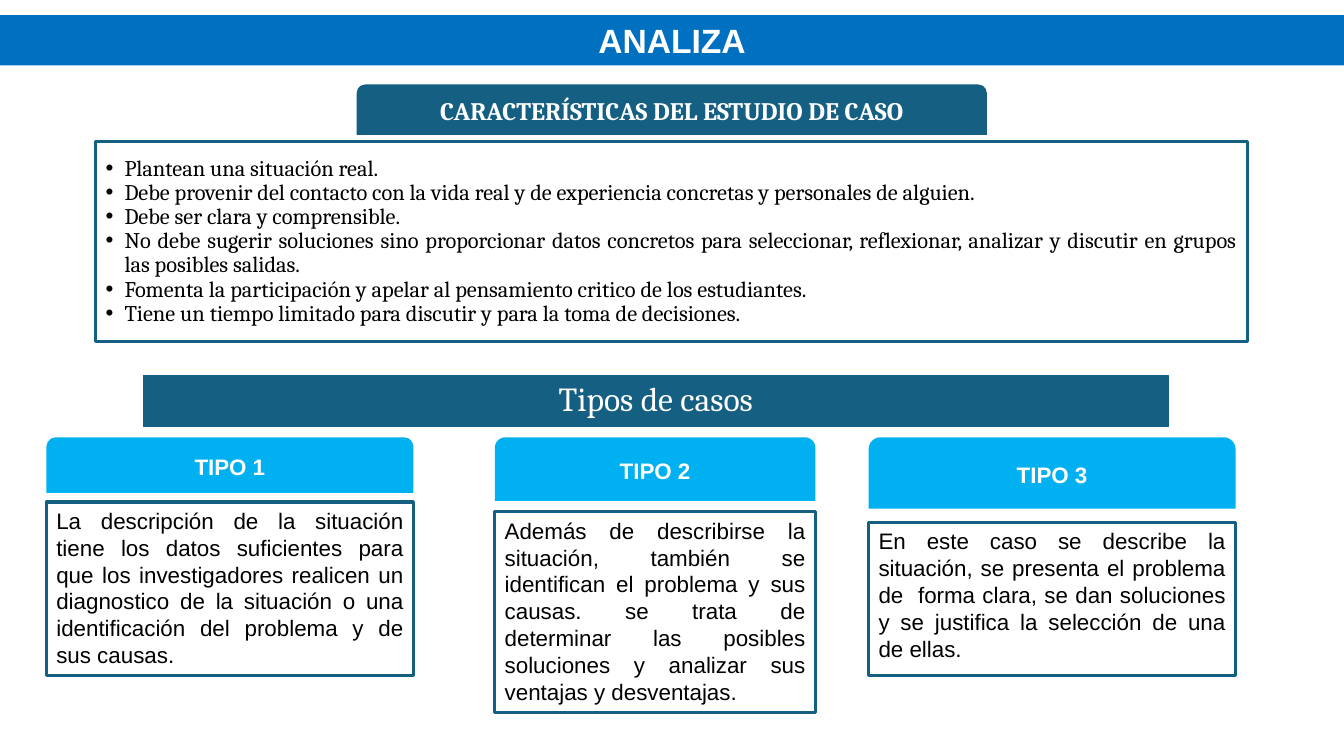
"""Build the slide on the traits and types of case studies."""
import pptx
import pptx.util
import pptx.dml.color
import pptx.enum.shapes
import pptx.enum.text
import pptx.oxml.ns
import lxml.etree

Cm, Pt = pptx.util.Cm, pptx.util.Pt
RGB = pptx.dml.color.RGBColor
Kind = pptx.enum.shapes.MSO_SHAPE
Align = pptx.enum.text.PP_ALIGN
Anchor = pptx.enum.text.MSO_ANCHOR

BLUE = RGB(0x00, 0x70, 0xC0)
TEAL = RGB(0x15, 0x60, 0x82)
SKY = RGB(0x00, 0xB0, 0xF0)
WHITE = RGB(0xFF, 0xFF, 0xFF)
BLACK = RGB(0x00, 0x00, 0x00)

WIDE, HIGH = 33.87, 19.05
BAR = 1.27
TOP = 11.02
INDENT = 0.48

TITLE = "ANALIZA"
HEADING = "CARACTERÍSTICAS DEL ESTUDIO DE CASO"
TRAITS = [
    "Plantean una situación real.",
    "Debe provenir del contacto con la vida real y de experiencia concretas y personales de alguien.",
    "Debe ser clara y comprensible.",
    "No debe sugerir soluciones sino proporcionar datos concretos para seleccionar, reflexionar, "
    "analizar y discutir en grupos las posibles salidas.",
    "Fomenta la participación y apelar al pensamiento critico de los estudiantes.",
    "Tiene un tiempo limitado para discutir y para la toma de decisiones.",
]
BANNER = "Tipos de casos"
TYPES = [
    {"left": 1.17, "width": 9.25, "head": 1.4, "gap": 0.23, "body": 4.37,
     "text": "La descripción de la situación tiene los datos suficientes para que los investigadores "
             "realicen un diagnostico de la situación o una identificación del problema y de sus causas."},
    {"left": 12.47, "width": 8.08, "head": 1.6, "gap": 0.28, "body": 5.05,
     "text": "Además de describirse la situación, también se identifican el problema y sus causas. "
             "se trata de determinar las posibles soluciones y analizar sus ventajas y desventajas."},
    {"left": 21.89, "width": 9.25, "head": 1.8, "gap": 0.34, "body": 3.86,
     "text": "En este caso se describe la situación, se presenta el problema de  forma clara, "
             "se dan soluciones y se justifica la selección de una de ellas."},
]


def add_box(slide, kind, place, lines, font, fill=None, edge=None,
            align=Align.CENTER, anchor=Anchor.MIDDLE, space=1.0):
    shape = slide.shapes.add_shape(kind, *map(Cm, place))
    shape.shadow.inherit = False
    if fill is None:
        shape.fill.background()
    else:
        shape.fill.solid()
        shape.fill.fore_color.rgb = fill
    if edge is None:
        shape.line.fill.background()
    else:
        shape.line.color.rgb = TEAL
        shape.line.width = Pt(edge)
    frame = shape.text_frame
    frame.word_wrap = True
    frame.vertical_anchor = anchor
    for index, text in enumerate(lines):
        para = frame.add_paragraph() if index else frame.paragraphs[0]
        para.alignment = align
        para.line_spacing = space
        run = para.add_run()
        run.text = text
        style = dict(font)
        run.font.color.rgb = style.pop("color")
        for name, value in style.items():
            setattr(run.font, name, value)
    return shape


def add_dots(shape):
    qn = pptx.oxml.ns.qn
    for para in shape.text_frame.paragraphs:
        props = para._p.get_or_add_pPr()
        props.set("marL", str(Cm(INDENT)))
        props.set("indent", str(-Cm(INDENT)))
        lxml.etree.SubElement(props, qn("a:buFont")).set("typeface", "Arial")
        lxml.etree.SubElement(props, qn("a:buChar")).set("char", "•")


def main():
    deck = pptx.Presentation()
    deck.slide_width, deck.slide_height = Cm(WIDE), Cm(HIGH)
    slide = deck.slides.add_slide(deck.slide_layouts[6])

    serif = {"name": "Cambria", "size": Pt(16), "bold": False, "color": BLACK}
    sans = {**serif, "name": "Arial"}
    label = {**sans, "bold": True, "color": WHITE}

    traits = add_box(slide, Kind.RECTANGLE, (2.41, 3.56, 29.03, 5.05), TRAITS, serif,
                     edge=2, align=Align.JUSTIFY, space=0.9)
    add_dots(traits)
    add_box(slide, Kind.RECTANGLE, (3.61, 9.47, 25.83, BAR), [BANNER],
            {**serif, "size": Pt(24), "color": WHITE}, fill=TEAL, edge=0.75, space=0.9)
    add_box(slide, Kind.RECTANGLE, (0, 0.38, WIDE, BAR), [TITLE],
            {**label, "size": Pt(24)}, fill=BLUE, anchor=Anchor.TOP)
    add_box(slide, Kind.ROUND_2_SAME_RECTANGLE, (8.99, 2.13, 15.88, BAR), [HEADING],
            {**label, "name": "Cambria", "size": Pt(18)}, fill=TEAL)

    for number, case in enumerate(TYPES, 1):
        left, width, head = case["left"], case["width"], case["head"]
        add_box(slide, Kind.RECTANGLE, (left, TOP + head + case["gap"], width, case["body"]),
                [case["text"]], sans, edge=2.25, align=Align.JUSTIFY, anchor=Anchor.TOP)
        add_box(slide, Kind.ROUND_2_SAME_RECTANGLE, (left, TOP, width, head),
                [f"TIPO {number}"], label, fill=SKY)

    deck.save("out.pptx")


if __name__ == "__main__":
    main()
